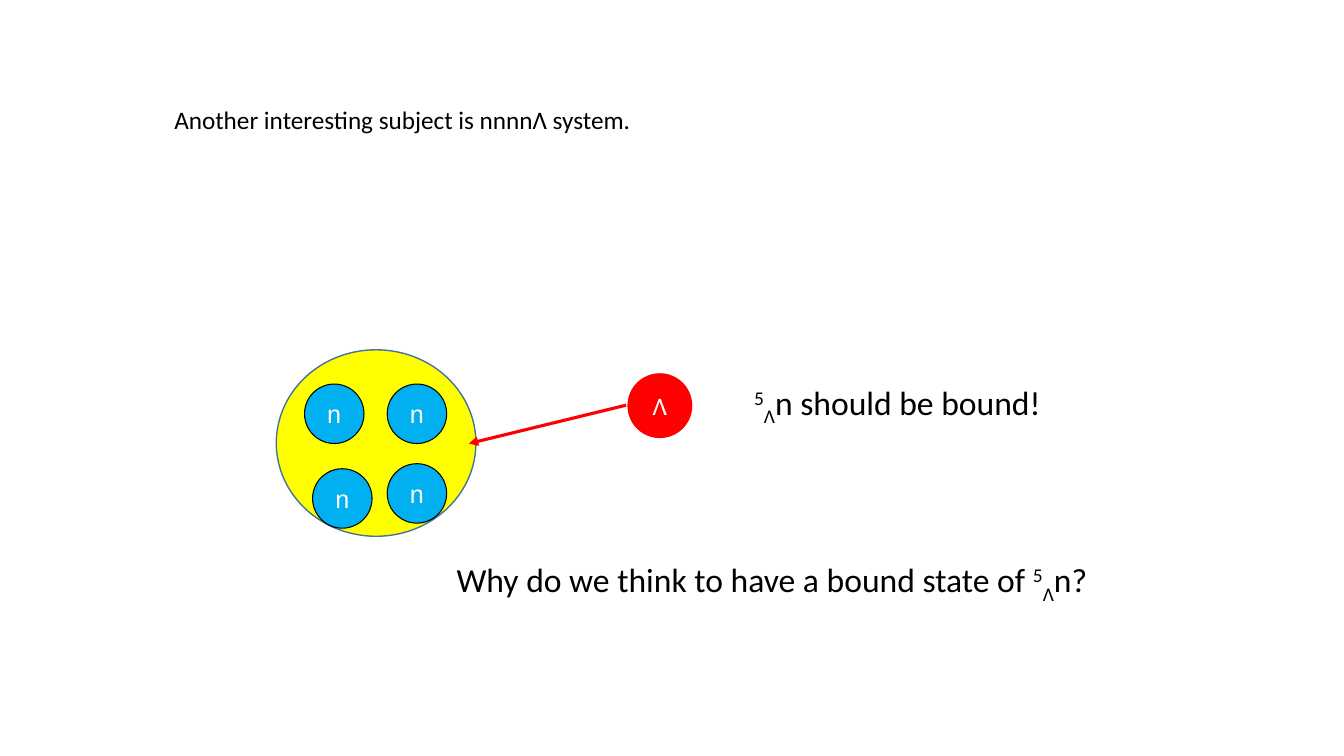
"""Build the slide on the bound state of four neutrons and a Λ particle."""
from lxml.etree import SubElement
from pptx import Presentation
from pptx.dml.color import RGBColor
from pptx.enum.shapes import MSO_CONNECTOR, MSO_SHAPE
from pptx.enum.text import MSO_ANCHOR, MSO_AUTO_SIZE, PP_ALIGN
from pptx.oxml.ns import qn
from pptx.util import Inches, Pt

COLORS = {"yellow": "FFFF00", "blue": "00B0F0", "red": "FF0000",
          "edge": "43739E", "black": "000000", "white": "FFFFFF"}
BASELINES = {"super": "30000", "sub": "-25000"}
HYPERNUCLEUS = [("5", "super"), ("Λ", "sub")]

CORE = (2.74, 3.47, 1.98, 1.85)
NEUTRON_SIZE = 0.59
NEUTRONS = [(3.02, 3.81), (3.84, 3.81), (3.84, 4.6), (3.1, 4.65)]
LAMBDA = (6.23, 3.71, 0.63, 0.63)
ARROW = (6.21, 4.02, 4.65, 4.4)
TEXTS = [
    ((7.38, 3.74, 3.11, 0.5), 24, HYPERNUCLEUS + [("n should be bound!", None)]),
    ((4.43, 5.5, 6.66, 0.5), 24,
     [("Why do we think to have a bound state of ", None)] + HYPERNUCLEUS + [("n?", None)]),
    ((1.63, 0.99, 4.78, 0.4), 18,
     [("Another interesting subject is nnnnΛ system.", None)]),
]


def rgb(name):
    return RGBColor.from_string(COLORS[name])


def write(para, spans, size, color, font="Calibri"):
    for text, level in spans:
        span = para.add_run()
        span.text = text
        for key, value in {"name": font, "size": Pt(size)}.items():
            setattr(span.font, key, value)
        span.font.color.rgb = rgb(color)
        if level:
            span._r.get_or_add_rPr().set("baseline", BASELINES[level])


def add_circle(page, place, fill, line, width, label="", font="Calibri", wrap=True):
    circle = page.shapes.add_shape(MSO_SHAPE.OVAL, *map(Inches, place))
    circle.shadow.inherit = False
    circle.fill.solid()
    circle.fill.fore_color.rgb = rgb(fill)
    circle.line.color.rgb = rgb(line)
    circle.line.width = Pt(width)
    frame = circle.text_frame
    for key, value in {"word_wrap": wrap, "vertical_anchor": MSO_ANCHOR.MIDDLE}.items():
        setattr(frame, key, value)
    if label:
        frame.paragraphs[0].alignment = PP_ALIGN.CENTER
        write(frame.paragraphs[0], [(label, None)], 18, "white", font)


def add_arrow(page, ends):
    arrow = page.shapes.add_connector(MSO_CONNECTOR.STRAIGHT, *map(Inches, ends))
    arrow.line.color.rgb = rgb("red")
    arrow.line.width = Pt(2.25)
    SubElement(arrow.line._get_or_add_ln(), qn("a:tailEnd"), type="triangle")
    SubElement(arrow._element.spPr, qn("a:effectLst"))


def add_text(page, place, size, spans):
    box = page.shapes.add_textbox(*map(Inches, place))
    frame = box.text_frame
    for key, value in {"word_wrap": False, "auto_size": MSO_AUTO_SIZE.SHAPE_TO_FIT_TEXT}.items():
        setattr(frame, key, value)
    write(frame.paragraphs[0], spans, size, "black")


def main():
    deck = Presentation()
    deck.slide_width, deck.slide_height = Inches(13.33), Inches(7.5)
    page = deck.slides.add_slide(deck.slide_layouts[6])
    add_circle(page, CORE, "yellow", "edge", 1)
    for left, top in NEUTRONS:
        place = (left, top, NEUTRON_SIZE, NEUTRON_SIZE)
        add_circle(page, place, "blue", "black", 0.75, "n", "Arial", False)
    add_arrow(page, ARROW)
    add_circle(page, LAMBDA, "red", "red", 1, "Λ")
    for place, size, spans in TEXTS:
        add_text(page, place, size, spans)
    deck.save("out.pptx")


if __name__ == "__main__":
    main()
